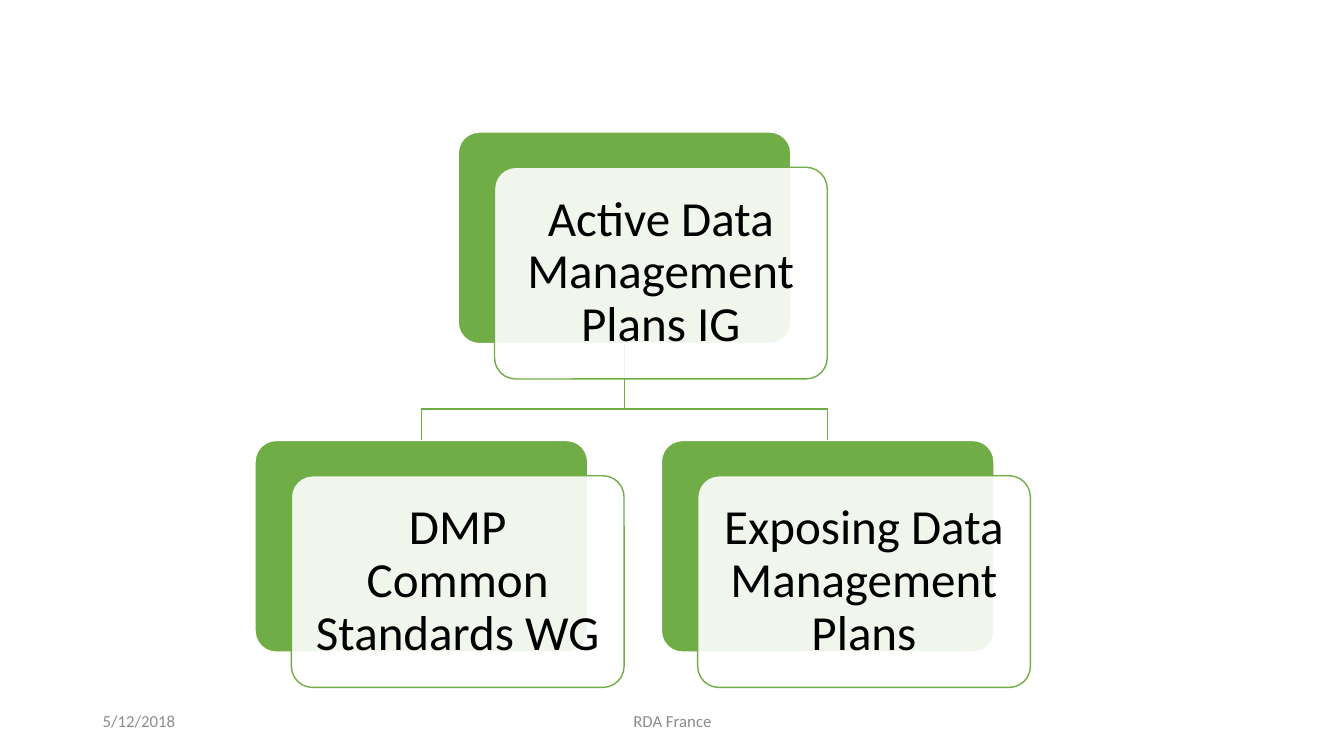
from dataclasses import dataclass

from lxml.etree import SubElement
from pptx import Presentation
from pptx.dml.color import RGBColor
from pptx.enum.shapes import MSO_SHAPE
from pptx.enum.text import MSO_ANCHOR, PP_ALIGN
from pptx.oxml.ns import qn
from pptx.shapes.autoshape import Shape
from pptx.slide import Slide
from pptx.text.text import TextFrame
from pptx.util import Inches, Pt


@dataclass(frozen=True)
class Theme:
    font: str = "Calibri"
    green: RGBColor = RGBColor(0x70, 0xAD, 0x47)
    white: RGBColor = RGBColor(0xFF, 0xFF, 0xFF)
    black: RGBColor = RGBColor(0, 0, 0)
    gray: RGBColor = RGBColor(0x8C, 0x8C, 0x8C)
    large: int = 35
    small: int = 12
    line: int = 1
    veil: int = 90  # opacity of the front panel, in percent


@dataclass(frozen=True)
class Grid:
    """Card grid in inches; cards may sit on half columns."""
    left: float = 2.53
    top: float = 1.31
    col: float = 4.03
    row: float = 3.06
    width: float = 3.3
    height: float = 2.1
    shift_x: float = 0.36
    shift_y: float = 0.35
    bend: float = 0.65  # drop from a card to the branch line

    def place(self, col: float, row: float) -> tuple[float, float]:
        return self.left + col * self.col, self.top + row * self.row


@dataclass(frozen=True)
class Card:
    text: str
    col: float
    row: float


@dataclass(frozen=True)
class Note:
    text: str
    left: float
    width: float
    align: PP_ALIGN


THEME = Theme()
GRID = Grid()
ROOT = Card("Active Data Management Plans IG", 0.5, 0)
TEAMS = [
    Card("DMP Common Standards WG", 0, 1),
    Card("Exposing Data Management Plans", 1, 1),
]
NOTES = [
    Note("5/12/2018", 0.92, 3, PP_ALIGN.LEFT),
    Note("RDA France", 4.42, 4.5, PP_ALIGN.CENTER),
]


def write(frame: TextFrame, text: str, size: int, color: RGBColor,
          align: PP_ALIGN) -> None:
    frame.word_wrap = True
    frame.vertical_anchor = MSO_ANCHOR.MIDDLE
    par = frame.paragraphs[0]
    par.alignment = align
    run = par.add_run()
    run.text = text
    run.font.name = THEME.font
    run.font.size = Pt(size)
    run.font.color.rgb = color


def edge(shape: Shape, color: RGBColor) -> None:
    shape.shadow.inherit = False
    shape.line.color.rgb = color
    shape.line.width = Pt(THEME.line)


def panel(slide: Slide, x: float, y: float, fill: RGBColor,
          line: RGBColor) -> Shape:
    shape = slide.shapes.add_shape(
        MSO_SHAPE.ROUNDED_RECTANGLE, Inches(x), Inches(y),
        Inches(GRID.width), Inches(GRID.height))
    shape.adjustments[0] = 0.1
    shape.fill.solid()
    shape.fill.fore_color.rgb = fill
    edge(shape, line)
    return shape


def draw_card(slide: Slide, card: Card) -> None:
    x, y = GRID.place(card.col, card.row)
    panel(slide, x, y, THEME.green, THEME.white)
    front = panel(slide, x + GRID.shift_x, y + GRID.shift_y,
                  THEME.white, THEME.green)
    # Let the back panel show through the front one
    tint = front.element.spPr.find(qn("a:solidFill")).find(qn("a:srgbClr"))
    SubElement(tint, qn("a:alpha")).set("val", str(THEME.veil * 1000))
    frame = front.text_frame
    frame.margin_left = frame.margin_right = Inches(0.15)
    frame.margin_top = frame.margin_bottom = Inches(0.15)
    write(frame, card.text, THEME.large, THEME.black, PP_ALIGN.CENTER)
    frame.paragraphs[0].line_spacing = 0.9


def draw_link(slide: Slide, above: Card, below: Card) -> None:
    x, y = GRID.place(above.col, above.row)
    end_x, end_y = GRID.place(below.col, below.row)
    half = GRID.width / 2
    start = y + GRID.height
    turn = start + GRID.bend
    pen = slide.shapes.build_freeform(
        Inches(x + half), Inches(start), scale=1.0)
    pen.add_line_segments(
        [(Inches(x + half), Inches(turn)),
         (Inches(end_x + half), Inches(turn)),
         (Inches(end_x + half), Inches(end_y))], close=False)
    link = pen.convert_to_shape()
    link.fill.background()
    edge(link, THEME.green)


def draw_note(slide: Slide, note: Note) -> None:
    box = slide.shapes.add_textbox(
        Inches(note.left), Inches(6.95), Inches(note.width), Inches(0.4))
    write(box.text_frame, note.text, THEME.small, THEME.gray, note.align)


def main() -> None:
    deck = Presentation()
    deck.slide_width, deck.slide_height = Inches(13.33), Inches(7.5)
    slide = deck.slides.add_slide(deck.slide_layouts[6])
    # Branch lines lie behind the cards
    for team in TEAMS:
        draw_link(slide, ROOT, team)
    for card in [ROOT, *TEAMS]:
        draw_card(slide, card)
    # Date and footer
    for note in NOTES:
        draw_note(slide, note)
    deck.save("out.pptx")


if __name__ == "__main__":
    main()
